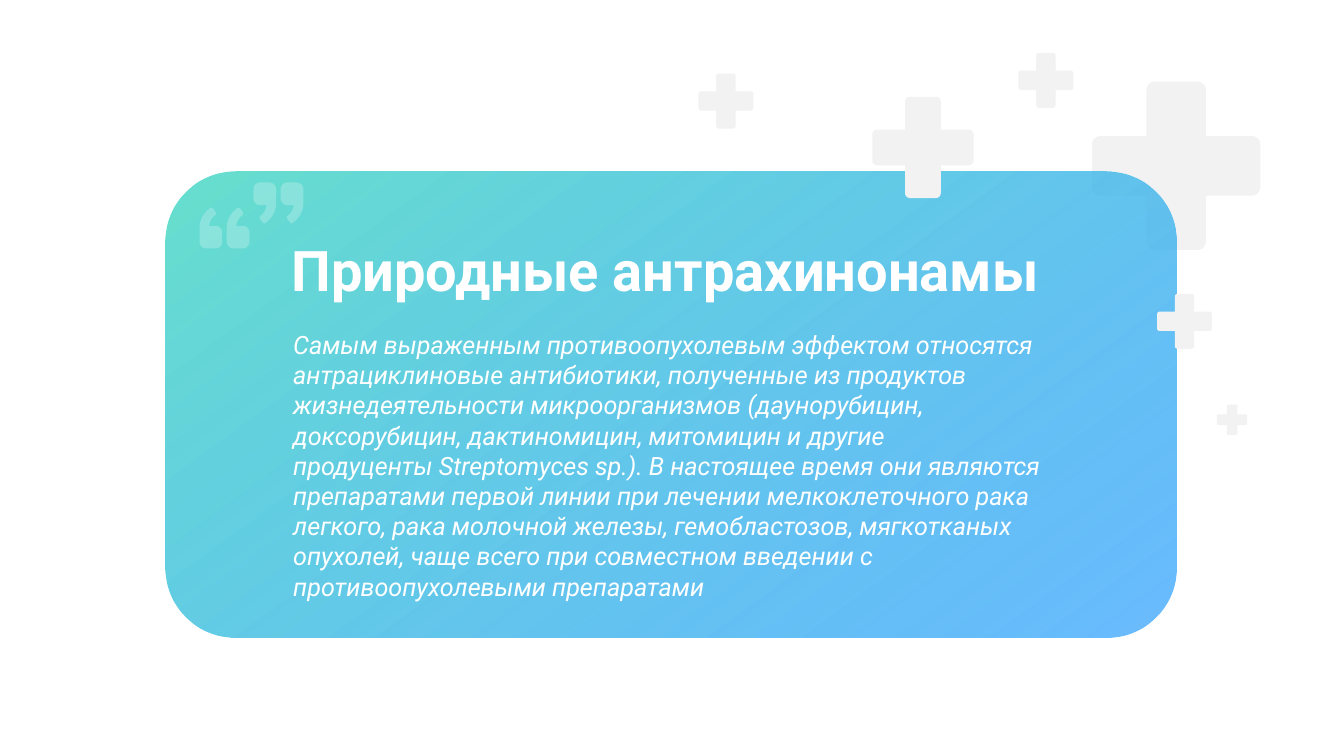
"""Build the slide on natural anthraquinones."""
from math import cos, pi, sin

from lxml import etree
from pptx import Presentation
from pptx.dml.color import RGBColor
from pptx.enum.shapes import MSO_SHAPE
from pptx.enum.text import MSO_AUTO_SIZE
from pptx.oxml.ns import qn
from pptx.util import Inches, Pt

ROUND = MSO_SHAPE.ROUNDED_RECTANGLE
GROW = MSO_AUTO_SIZE.SHAPE_TO_FIT_TEXT
FONT = "Roboto"
COLORS = {"white": "FFFFFF", "cross": "F2F2F3", "teal": "67E0CE", "blue": "219BFE"}

TITLE = "Природные антрахинонамы"
HARD = chr(160)
BODY = (
    "Самым выраженным противоопухолевым эффектом относятся антрациклиновые "
    "антибиотики, полученные из продуктов жизнедеятельности микроорганизмов "
    "(даунорубицин, доксорубицин, дактиномицин, митомицин и другие "
    f"продуценты{HARD}Streptomyces sр.). В настоящее время они являются препаратами "
    "первой линии при лечении мелкоклеточного рака легкого, рака молочной железы, "
    "гемобластозов, мягкотканых опухолей, чаще всего при совместном введении с "
    "противоопухолевыми препаратами"
)
CARD = (3.29, 3.41, 20.05, 9.24)
TEXTS = [
    (TITLE, (5.69, 4.57, 15.98, 1.55), 80, True, False),
    (BODY, (5.72, 6.43, 16.17, 5.65), 36, False, True),
]
BACK = (21.67, 1.62, 3.34)
FRONT = [
    (22.96, 5.83, 1.09),
    (20.21, 1.05, 1.09),
    (17.31, 1.92, 2.01),
    (13.86, 1.46, 1.09),
    (24.15, 8.03, 0.6),
]
ARM, CORNER = 0.353, 0.05

MARK = [
    (0.13, 0), (0.06, 0, 0, 0.06, 0, 0.14), (0, 0.32),
    (0, 0.39, 0.06, 0.45, 0.13, 0.45), (0.26, 0.45),
    (0.25, 0.54, 0.21, 0.61, 0.14, 0.66), (0.12, 0.67, 0.12, 0.7, 0.13, 0.72),
    (0.18, 0.79), (0.19, 0.81, 0.22, 0.82, 0.24, 0.8),
    (0.37, 0.71, 0.45, 0.57, 0.45, 0.41), (0.45, 0.14),
    (0.45, 0.06, 0.39, 0, 0.31, 0),
]
QUOTES = [(5.03, 3.62, 1), (5.57, 3.62, 1), (4.41, 4.93, -1), (4.95, 4.93, -1)]


def rgb(name):
    return RGBColor.from_string(COLORS[name])


def fade(color, share):
    etree.SubElement(color, qn("a:alpha")).set("val", str(share * 1000))


def outline(shapes, loops, color):
    loops = [[(Inches(x), Inches(y)) for x, y in loop] for loop in loops]
    pen = shapes.build_freeform(*loops[0][0])
    for i, loop in enumerate(loops):
        if i:
            pen.move_to(*loop[0])
        pen.add_line_segments(loop[1:], close=True)
    shape = pen.convert_to_shape()
    shape.shadow.inherit = False
    shape.fill.solid()
    shape.fill.fore_color.rgb = rgb(color)
    shape.line.fill.background()
    return shape


def cross(shapes, left, top, size):
    half, edge = ARM / 2, 0.5 - CORNER
    arm = [(half, -half)]
    for cy, start in ((CORNER - half, -pi / 2), (half - CORNER, 0)):
        for i in range(7):
            turn = start + i * pi / 12
            arm.append((edge + CORNER * cos(turn), cy + CORNER * sin(turn)))
    loop = []
    for _ in range(4):
        loop += [(left + size * (0.5 + x), top + size * (0.5 + y)) for x, y in arm]
        arm = [(-y, x) for x, y in arm]
    outline(shapes, [loop], "cross")


def trace(steps, count=8):
    points = [steps[0]]
    for step in steps[1:]:
        if len(step) == 2:
            points.append(step)
            continue
        knots = [points[-1], step[:2], step[2:4], step[4:]]
        for i in range(1, count + 1):
            t = i / count
            parts = ((1 - t) ** 3, 3 * t * (1 - t) ** 2, 3 * t * t * (1 - t), t ** 3)
            points.append(tuple(sum(p * k[n] for p, k in zip(parts, knots)) for n in (0, 1)))
    return points


def card(shapes):
    shape = shapes.add_shape(ROUND, *map(Inches, CARD))
    shape.adjustments[0] = 0.151
    shape.shadow.inherit = False
    shape.line.fill.background()
    shape.fill.gradient()
    shape.fill.gradient_angle = 306
    for stop, name, place in zip(shape.fill.gradient_stops, ("teal", "blue"), (0, 1)):
        stop.color.rgb = rgb(name)
        stop.position = place
    fade(list(shape.element.spPr.iter(qn("a:srgbClr")))[-1], 67)


def write(shapes, words, place, size, bold, italic):
    frame = shapes.add_textbox(*map(Inches, place)).text_frame
    frame.word_wrap = True
    frame.auto_size = GROW
    frame.margin_left = frame.margin_right = Inches(0.1)
    frame.margin_top = frame.margin_bottom = Inches(0.1)
    para = frame.paragraphs[0]
    para.text = words
    font = para.font
    font.name, font.size, font.bold, font.italic = FONT, Pt(size), bold, italic
    font.color.rgb = rgb("white")


def main():
    deck = Presentation()
    deck.slide_width, deck.slide_height = Inches(26.67), Inches(15)
    shapes = deck.slides.add_slide(deck.slide_layouts[6]).shapes
    cross(shapes, *BACK)
    card(shapes)
    for text in TEXTS:
        write(shapes, *text)
    mark = trace(MARK)
    loops = [[(x + way * dx, y + way * dy) for dx, dy in mark] for x, y, way in QUOTES]
    quotes = outline(shapes, loops, "white")
    fade(next(quotes.element.spPr.iter(qn("a:srgbClr"))), 24)
    for spot in FRONT:
        cross(shapes, *spot)
    deck.save("out.pptx")


if __name__ == "__main__":
    main()
